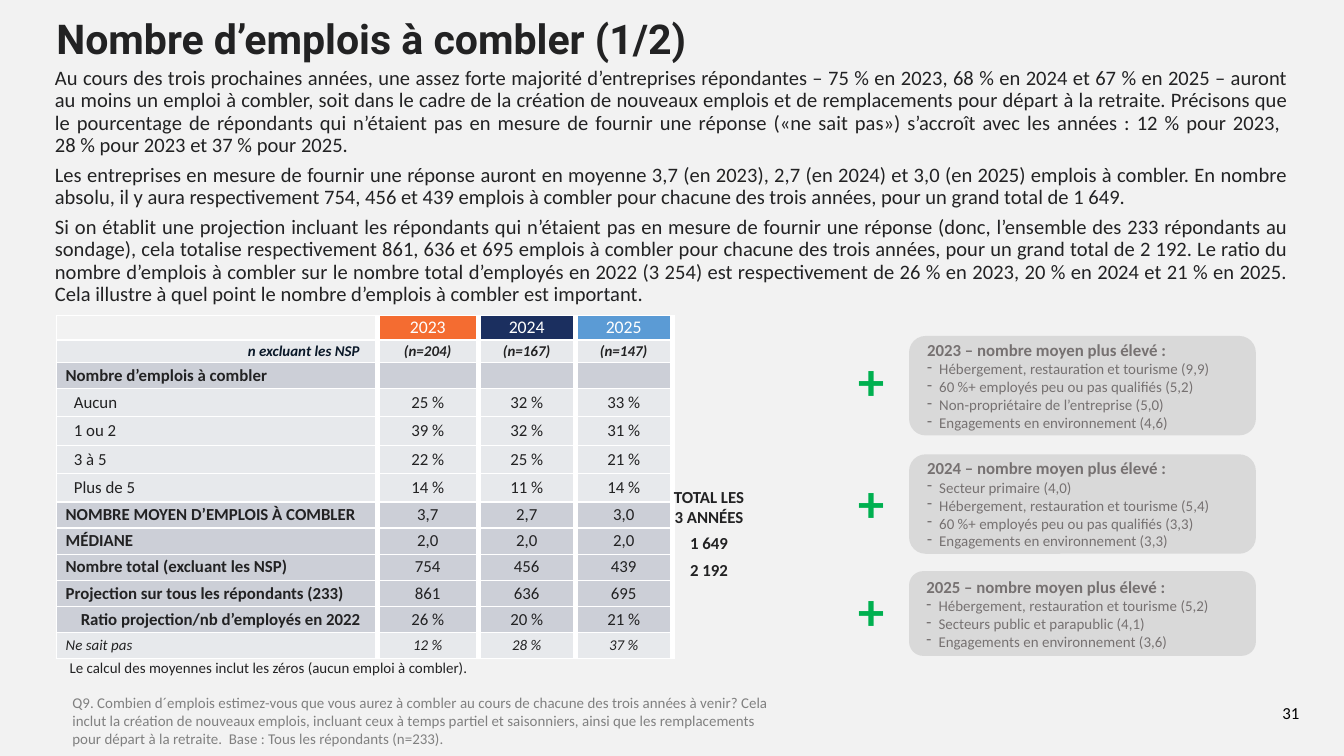
from dataclasses import dataclass

from lxml import etree
from pptx import Presentation
from pptx.dml.color import RGBColor
from pptx.enum.shapes import MSO_SHAPE
from pptx.enum.text import MSO_ANCHOR, PP_ALIGN
from pptx.oxml.ns import qn
from pptx.util import Pt

LEFT, CENTER, RIGHT, JUSTIFY = PP_ALIGN.LEFT, PP_ALIGN.CENTER, PP_ALIGN.RIGHT, PP_ALIGN.JUSTIFY
TOP, MIDDLE, BOTTOM = MSO_ANCHOR.TOP, MSO_ANCHOR.MIDDLE, MSO_ANCHOR.BOTTOM
ROUNDED = MSO_SHAPE.ROUNDED_RECTANGLE
COLORS = {
    "background": "F2F2F2", "text": "222223", "black": "000000", "white": "FFFFFF",
    "note": "808080", "plus": "00B050", "card": "D9D9D9", "card_text": "767171",
    "2023": "F46C31", "2024": "1B2F5F", "2025": "5B9BD5",
    "light": "E7E9EC", "dark": "CCCFD7", "navy": "0A1828",
}


@dataclass
class Style:
    size: float
    color: str = "text"
    bold: bool = False
    italic: bool = False
    font: str = "Calibri"


@dataclass
class Card:
    year: str
    top: float
    height: float
    plus_top: float
    items: list[str]


@dataclass
class Row:
    """One table row; insets are label left, then value sides."""
    height: float
    label: str
    values: list[str]
    fill: str
    label_style: Style
    value_style: Style
    label_inset: float = 5
    value_inset: float = 0.7
    label_align: int = LEFT


PLAIN, BOLD = Style(9), Style(9, bold=True)
SMALL_ITALIC = Style(8, italic=True)
YEARS = ["2023", "2024", "2025"]


def answer(label: str, *values: str) -> Row:
    return Row(15.2, label, list(values), "light", PLAIN, PLAIN, 9.4, 2)


def summary(label: str, *values: str, inset: float = 5) -> Row:
    return Row(14, label, list(values), "dark", BOLD, PLAIN, inset)


ROWS = [
    Row(13.2, "", YEARS, "", PLAIN, Style(9.5, "white")),
    Row(12, "n excluant les NSP", ["(n=204)", "(n=167)", "(n=147)"], "light",
        Style(8, "navy", True, True), Style(8, "text", True, True), 9.4, 9.4, RIGHT),
    Row(14, "Nombre d’emplois à combler", ["", "", ""], "dark", BOLD, PLAIN),
    answer("Aucun", "25 %", "32 %", "33 %"),
    answer("1 ou 2", "39 %", "32 %", "31 %"),
    answer("3 à 5", "22 %", "25 %", "21 %"),
    answer("Plus de 5", "14 %", "11 %", "14 %"),
    summary("NOMBRE MOYEN D’EMPLOIS À COMBLER", "3,7", "2,7", "3,0"),
    summary("MÉDIANE", "2,0", "2,0", "2,0"),
    summary("Nombre total (excluant les NSP)", "754", "456", "439"),
    summary("Projection sur tous les répondants (233)", "861", "636", "695"),
    summary("Ratio projection/nb d’employés en 2022", "26 %", "20 %", "21 %", inset=13.1),
    Row(14, "Ne sait pas", ["12 %", "28 %", "37 %"], "light", SMALL_ITALIC, SMALL_ITALIC),
]
CARDS = [
    Card("2023", 180, 53.3, 183, [
        "Hébergement, restauration et tourisme (9,9)", "60 %+ employés peu ou pas qualifiés (5,2)",
        "Non-propriétaire de l’entreprise (5,0)", "Engagements en environnement (4,6)"]),
    Card("2024", 243.4, 53.3, 248.4, [
        "Secteur primaire (4,0)", "Hébergement, restauration et tourisme (5,4)",
        "60 %+ employés peu ou pas qualifiés (3,3)", "Engagements en environnement (3,3)"]),
    Card("2025", 306, 45.4, 306, [
        "Hébergement, restauration et tourisme (5,2)", "Secteurs public et parapublic (4,1)",
        "Engagements en environnement (3,6)"]),
]
BODY = [
    "Au cours des trois prochaines années, une assez forte majorité d’entreprises répondantes – 75 % en 2023, 68 % en 2024 et 67 % en 2025 – auront au moins un emploi à combler, soit dans le cadre de la création de nouveaux emplois et de remplacements pour départ à la retraite. Précisons que le pourcentage de répondants qui n’étaient pas en mesure de fournir une réponse («ne sait pas») s’accroît avec les années : 12 % pour 2023, \n28 % pour 2023 et 37 % pour 2025.",
    "Les entreprises en mesure de fournir une réponse auront en moyenne 3,7 (en 2023), 2,7 (en 2024) et 3,0 (en 2025) emplois à combler. En nombre absolu, il y aura respectivement 754, 456 et 439 emplois à combler pour chacune des trois années, pour un grand total de 1 649.",
    "Si on établit une projection incluant les répondants qui n’étaient pas en mesure de fournir une réponse (donc, l’ensemble des 233 répondants au sondage), cela totalise respectivement 861, 636 et 695 emplois à combler pour chacune des trois années, pour un grand total de 2 192. Le ratio du nombre d’emplois à combler sur le nombre total d’employés en 2022 (3 254) est respectivement de 26 % en 2023, 20 % en 2024 et 21 % en 2025. Cela illustre à quel point le nombre d’emplois à combler est important.",
]
NOTE = "Le calcul des moyennes inclut les zéros (aucun emploi à combler)."
QUESTION = "Q9. Combien d´emplois estimez-vous que vous aurez à combler au cours de chacune des trois années à venir? Cela inclut la création de nouveaux emplois, incluant ceux à temps partiel et saisonniers, ainsi que les remplacements pour départ à la retraite.  Base : Tous les répondants (n=233)."


def rgb(name: str) -> RGBColor:
    return RGBColor.from_string(COLORS[name])


def add_text(p, text: str, style: Style, align=LEFT) -> None:
    p.alignment = align
    for i, line in enumerate(text.split("\n")):
        if i:
            p.add_line_break()
        r = p.add_run()
        r.text = line
        r.font.size, r.font.name = Pt(style.size), style.font
        r.font.bold, r.font.italic = style.bold, style.italic
        r.font.color.rgb = rgb(style.color)


def fill_frame(tf, texts: list[str], style: Style, align=LEFT, anchor=TOP,
               insets=(7.2, 3.6), after=(), spacing=None) -> None:
    tf.word_wrap, tf.vertical_anchor = True, anchor
    tf.margin_left = tf.margin_right = Pt(insets[0])
    tf.margin_top = tf.margin_bottom = Pt(insets[1])
    for i, text in enumerate(texts):
        p = tf.add_paragraph() if i else tf.paragraphs[0]
        if i < len(after):
            p.space_after = Pt(after[i])
        if spacing:
            p.line_spacing = Pt(spacing)
        add_text(p, text, style, align)


def add_box(s, box: tuple, texts: list[str], style: Style, **layout) -> None:
    tf = s.shapes.add_textbox(*map(Pt, box)).text_frame
    fill_frame(tf, texts, style, **layout)


def add_card(s, card: Card) -> None:
    sp = s.shapes.add_shape(ROUNDED, Pt(487), Pt(card.top), Pt(185.8), Pt(card.height))
    sp.shadow.inherit = False
    sp.fill.solid()
    sp.fill.fore_color.rgb = rgb("card")
    sp.line.fill.background()
    tf = sp.text_frame
    fill_frame(tf, [f"{card.year} – nombre moyen plus élevé :"],
               Style(9, "card_text", True), anchor=MIDDLE)
    for item in card.items:
        p = tf.add_paragraph()
        pPr = p._p.get_or_add_pPr()
        pPr.set("marL", str(Pt(6.5)))
        pPr.set("indent", str(-Pt(6.5)))
        etree.SubElement(pPr, qn("a:buChar"), char="-")
        add_text(p, item, Style(8, "card_text"))
    add_box(s, (431.3, card.plus_top, 71.3, 41), ["+"], Style(28, "plus", True), align=CENTER)


def set_borders(cell, first_column: bool) -> None:
    tcPr = cell._tc.get_or_add_tcPr()
    widths = {"lnL": 0.75 if first_column else 3, "lnR": 3, "lnT": 0.75, "lnB": 0.75}
    for side, width in widths.items():
        ln = etree.SubElement(tcPr, qn(f"a:{side}"), w=str(Pt(width)))
        fill = etree.SubElement(ln, qn("a:solidFill"))
        etree.SubElement(fill, qn("a:srgbClr"), val=COLORS["white"])


def fill_cell(cell, text: str, style: Style, fill: str, align, insets: tuple) -> None:
    left, right, vertical = insets
    cell.margin_left, cell.margin_right = Pt(left), Pt(right)
    cell.margin_top = cell.margin_bottom = Pt(vertical)
    cell.vertical_anchor = MIDDLE
    if fill:
        cell.fill.solid()
        cell.fill.fore_color.rgb = rgb(fill)
    else:
        cell.fill.background()
    p = cell.text_frame.paragraphs[0]
    if text:
        add_text(p, text, style, align)
    else:
        etree.SubElement(p._p, qn("a:endParaRPr"), sz=str(int(style.size * 100)))


def add_results(s) -> None:
    widths = [172, 54, 52, 52]
    height = sum(row.height for row in ROWS)
    table = s.shapes.add_table(len(ROWS), len(widths), Pt(30.2), Pt(169),
                               Pt(sum(widths)), Pt(height)).table
    table.first_row = table.horz_banding = False
    for column, width in zip(table.columns, widths):
        column.width = Pt(width)
    for i, row in enumerate(ROWS):
        table.rows[i].height = Pt(row.height)
        for j, text in enumerate([row.label, *row.values]):
            cell = table.cell(i, j)
            set_borders(cell, j == 0)
            if j == 0:
                right = 9.4 if row.label_align == RIGHT else 5
                fill_cell(cell, text, row.label_style, row.fill, row.label_align,
                          (row.label_inset, right, 0))
            else:
                side = row.value_inset
                fill_cell(cell, text, row.value_style, row.fill or text, CENTER,
                          (side, side, 2 if side == 2 else 0))


def main() -> None:
    prs = Presentation()
    prs.slide_width, prs.slide_height = Pt(720), Pt(405)
    s = prs.slides.add_slide(prs.slide_layouts[5])
    s.background.fill.solid()
    s.background.fill.fore_color.rgb = rgb("background")
    title = s.shapes.title
    title.left, title.top, title.width, title.height = Pt(25.2), Pt(7.2), Pt(675.4), Pt(26)
    fill_frame(title.text_frame, ["Nombre d’emplois à combler (1/2)"],
               Style(22, bold=True, font="Roboto"), anchor=MIDDLE, insets=(5, 2.9))
    add_box(s, (22.3, 36, 675.4, 129.6), BODY, Style(11), align=JUSTIFY,
            insets=(7.2, 0), after=(4, 4, 4), spacing=12)
    add_results(s)
    add_box(s, (353.5, 257, 52.6, 80), ["TOTAL LES 3 ANNÉES", "1 649", "2 192"], BOLD,
            align=CENTER, after=(3, 4))
    for card in CARDS:
        add_card(s, card)
    add_box(s, (30.2, 349.2, 237.6, 17), [NOTE], Style(8))
    add_box(s, (31.7, 368, 396.7, 36), [QUESTION], Style(8, "note"))
    add_box(s, (673.2, 369.4, 36.7, 21.6), ["31"], Style(9, "black"), align=CENTER, anchor=BOTTOM)
    prs.save("out.pptx")


if __name__ == "__main__":
    main()
